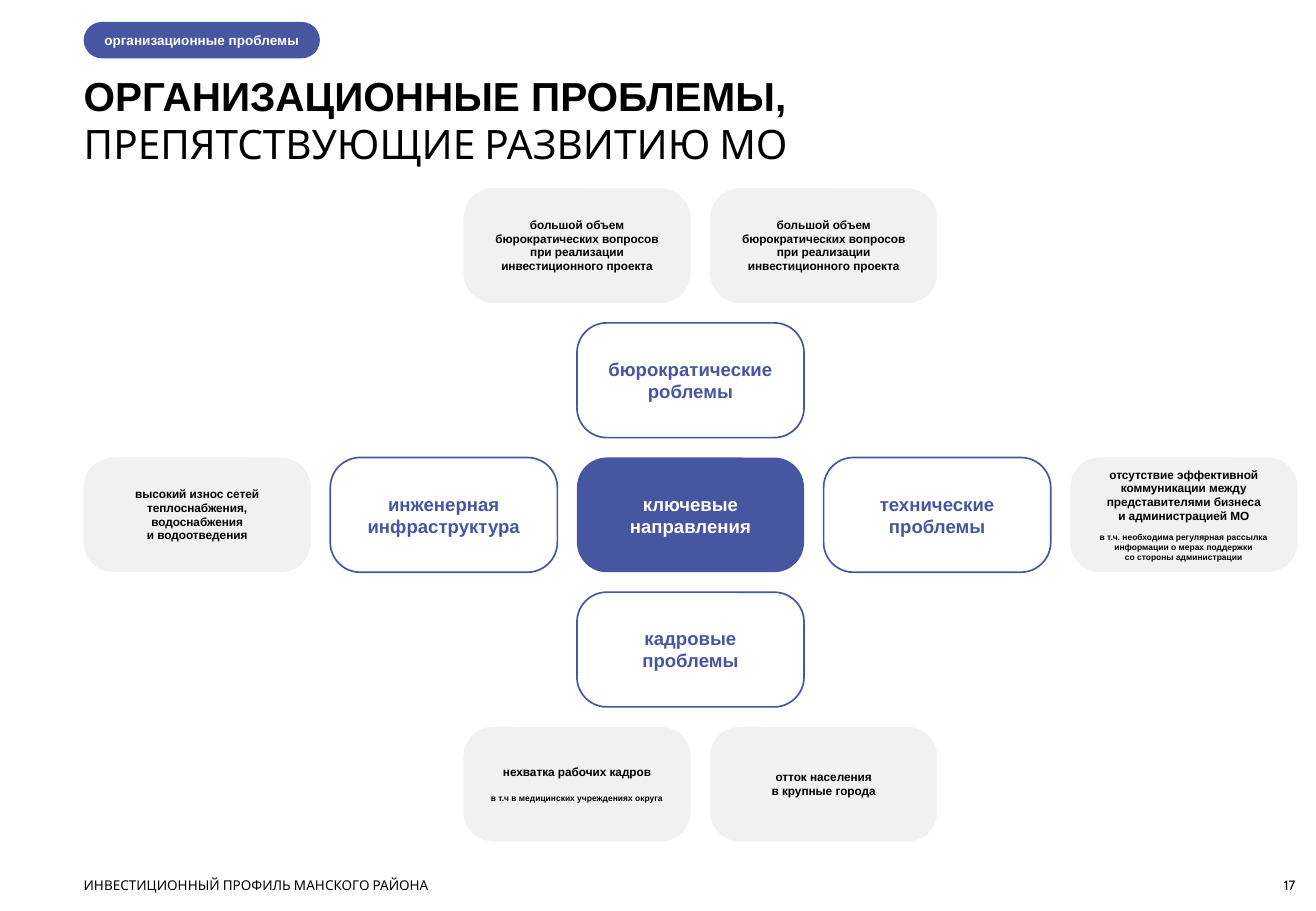
"""Build the slide on organisational problems that hold back the municipality."""
import pptx
import pptx.dml.color
import pptx.enum.shapes
import pptx.enum.text
import pptx.util

Pt = pptx.util.Pt
RGBColor = pptx.dml.color.RGBColor
ALIGN = pptx.enum.text.PP_ALIGN
ANCHOR = pptx.enum.text.MSO_ANCHOR

BLUE = RGBColor(0x47, 0x56, 0xA0)
GREY = RGBColor(0xF1, 0xF1, 0xF1)
WHITE = RGBColor(0xFF, 0xFF, 0xFF)
BLACK = RGBColor(0, 0, 0)

TITLE = [("ОРГАНИЗАЦИОННЫЕ ПРОБЛЕМЫ,", "Arial", True),
         ("ПРЕПЯТСТВУЮЩИЕ РАЗВИТИЮ МО", "Cabin", False)]
BADGE = "организационные проблемы"
FOOTER = "ИНВЕСТИЦИОННЫЙ ПРОФИЛЬ МАНСКОГО РАЙОНА"
PAGE_NUMBER = "17"
BUREAUCRACY = "большой объем\nбюрократических вопросов\nпри реализации\nинвестиционного проекта"

# style: fill, outline, text colour, text size, line pitch
STYLES = {
    "centre": (BLUE, None, WHITE, 11, 13),
    "topic": (None, BLUE, BLUE, 11, 13),
    "detail": (GREY, None, BLACK, 7, 8.1),
}
NOTE_SIZE, NOTE_PITCH = 5, 5.9

# column, row, style, text, note, gap before the note
CARDS = [
    (2, 2, "centre", "ключевые\nнаправления", "", 0),
    (2, 1, "topic", "бюрократические\nроблемы", "", 0),
    (1, 2, "topic", "инженерная\nинфраструктура", "", 0),
    (3, 2, "topic", "технические\nпроблемы", "", 0),
    (2, 3, "topic", "кадровые\nпроблемы", "", 0),
    (1.54, 0, "detail", BUREAUCRACY, "", 0),
    (2.54, 0, "detail", BUREAUCRACY, "", 0),
    (0, 2, "detail", "высокий износ сетей\nтеплоснабжения,\nводоснабжения\nи водоотведения", "", 0),
    (4, 2, "detail",
     "отсутствие эффективной\nкоммуникации между\nпредставителями бизнеса\nи администрацией МО",
     "в т.ч. необходима регулярная рассылка\nинформации о мерах поддержки\nсо стороны администрации", 5.6),
    (1.54, 4, "detail", "нехватка рабочих кадров", "в т.ч в медицинских учреждениях округа", 9),
    (2.54, 4, "detail", "отток населения\nв крупные города", "", 0),
]

LEFT, TOP = 49.6, 111.6
CARD_WIDTH, CARD_HEIGHT = 134.6, 68
COLUMN_STEP, ROW_STEP = 146.2, 79.8


def prepare(frame, anchor):
    frame.margin_left = frame.margin_right = frame.margin_top = frame.margin_bottom = 0
    frame.word_wrap = True
    frame.auto_size = pptx.enum.text.MSO_AUTO_SIZE.NONE
    frame.vertical_anchor = anchor


def write(para, text, size, colour, font="Arial", bold=True, align=ALIGN.CENTER, pitch=None):
    para.text = text
    para.alignment = align
    para.font.name = font
    para.font.size = Pt(size)
    para.font.bold = bold
    para.font.color.rgb = colour
    if pitch:
        para.line_spacing = Pt(pitch)


def add_rounded(page, left, top, width, height, radius, fill, outline):
    box = page.shapes.add_shape(pptx.enum.shapes.MSO_SHAPE.ROUNDED_RECTANGLE,
                                Pt(left), Pt(top), Pt(width), Pt(height))
    box.adjustments[0] = radius
    box.shadow.inherit = False
    if fill is None:
        box.fill.background()
    else:
        box.fill.solid()
        box.fill.fore_color.rgb = fill
    if outline is None:
        box.line.fill.background()
    else:
        box.line.color.rgb = outline
        box.line.width = Pt(1)
    prepare(box.text_frame, ANCHOR.MIDDLE)
    return box.text_frame


def add_card(page, column, row, style, text, note, gap):
    fill, outline, colour, size, pitch = STYLES[style]
    frame = add_rounded(page, LEFT + column * COLUMN_STEP, TOP + row * ROW_STEP,
                        CARD_WIDTH, CARD_HEIGHT, 0.26, fill, outline)
    write(frame.paragraphs[0], text, size, colour, pitch=pitch)
    if note:
        para = frame.add_paragraph()
        write(para, note, NOTE_SIZE, colour, pitch=NOTE_PITCH)
        para.space_before = Pt(gap)


def add_label(page, left, width, text):
    box = page.shapes.add_textbox(Pt(left), Pt(520), Pt(width), Pt(11))
    prepare(box.text_frame, ANCHOR.TOP)
    write(box.text_frame.paragraphs[0], text, 8, BLACK, "Cabin", False, ALIGN.LEFT)


def main():
    deck = pptx.Presentation()
    deck.slide_width, deck.slide_height = Pt(780), Pt(540)
    page = deck.slides.add_slide(deck.slide_layouts[5])

    title = page.shapes.title
    title.left, title.top, title.width, title.height = Pt(LEFT), Pt(42), Pt(696), Pt(60)
    frame = title.text_frame
    prepare(frame, ANCHOR.TOP)
    frame.add_paragraph()
    for para, (text, font, bold) in zip(frame.paragraphs, TITLE):
        write(para, text, 24, BLACK, font, bold, ALIGN.LEFT)

    badge = add_rounded(page, LEFT, 13, 140, 21.6, 0.5, BLUE, None)
    write(badge.paragraphs[0], BADGE, 8, WHITE)
    for card in CARDS:
        add_card(page, *card)
    add_label(page, LEFT, 317, FOOTER)
    add_label(page, 761, 14, PAGE_NUMBER)
    deck.save("out.pptx")


if __name__ == "__main__":
    main()
